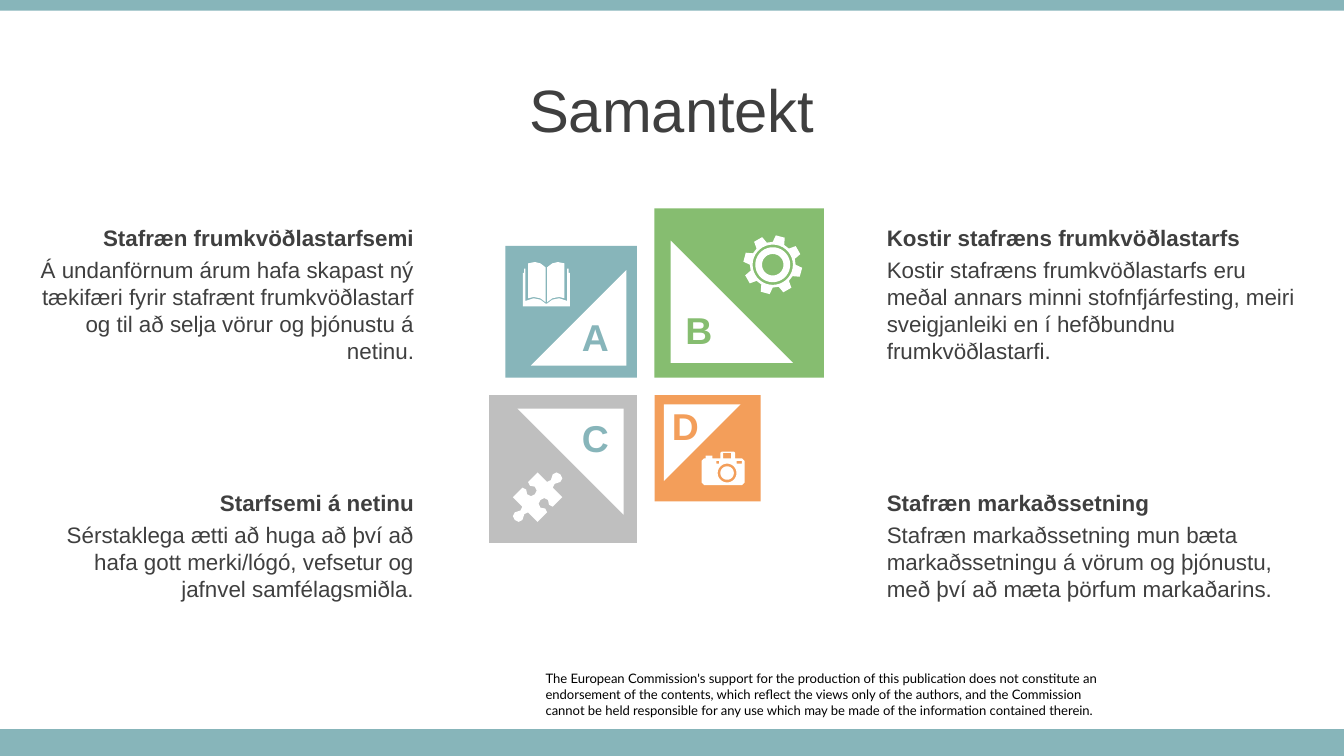
import math

from pptx import Presentation
from pptx.dml.color import RGBColor
from pptx.enum.shapes import MSO_SHAPE
from pptx.enum.text import MSO_ANCHOR, PP_ALIGN
from pptx.util import Pt

PX = 9144
RECT, TRIANGLE = MSO_SHAPE.RECTANGLE, MSO_SHAPE.RIGHT_TRIANGLE
LEFT, CENTER, RIGHT = PP_ALIGN.LEFT, PP_ALIGN.CENTER, PP_ALIGN.RIGHT
MIDDLE, TOP = MSO_ANCHOR.MIDDLE, MSO_ANCHOR.TOP
COLORS = {"teal": "87B5BA", "green": "86BD70", "orange": "F39E5A",
          "gray": "BFBFBF", "white": "FFFFFF", "text": "3F3F3F", "black": "000000"}


def px(*lengths):
    """Turn pixel lengths into EMU."""
    return [round(n * PX) for n in lengths]


def paint(sp, color):
    """Give a shape a plain fill with no line or shadow."""
    sp.shadow.inherit = False
    sp.fill.solid()
    sp.fill.fore_color.rgb = RGBColor.from_string(COLORS[color])
    sp.line.fill.background()


def add_block(s, kind, box, color, rotation=0):
    """Add a filled preset shape."""
    sp = s.shapes.add_shape(kind, *px(*box))
    sp.rotation = rotation
    paint(sp, color)


def add_text(s, box, lines, size, color="text", align=LEFT, bold=False,
             font="Arial", anchor=TOP, inset=(10, 5)):
    """Add a text box with one paragraph per line."""
    tf = s.shapes.add_textbox(*px(*box)).text_frame
    tf.word_wrap = True
    tf.vertical_anchor = anchor
    tf.margin_left = tf.margin_right = inset[0] * PX
    tf.margin_top = tf.margin_bottom = inset[1] * PX
    tf.text = "\n".join(lines)
    for p in tf.paragraphs:
        p.alignment = align
        p.font.name, p.font.size, p.font.bold = font, Pt(size), bold
        p.font.color.rgb = RGBColor.from_string(COLORS[color])


def add_icon(s, x, y, contours, rotation=0):
    """Add a white outline whose inner contours are holes."""
    first, *others = [[px(*point) for point in c] for c in contours]
    builder = s.shapes.build_freeform(*first[0])
    builder.add_line_segments(first[1:])
    for contour in others:
        builder.move_to(*contour[0])
        builder.add_line_segments(contour[1:])
    sp = builder.convert_to_shape(*px(x, y))
    sp.rotation = rotation
    paint(sp, "white")


def polar(cx, cy, radius, degrees):
    """Return the point at an angle on a circle."""
    a = math.radians(degrees)
    return cx + radius * math.cos(a), cy + radius * math.sin(a)


def circle(cx, cy, radius):
    """Return a closed circle as short segments."""
    return [polar(cx, cy, radius, d) for d in range(0, 361, 10)]


def rectangle(x, y, w, h):
    """Return the corners of a closed rectangle."""
    return [(x, y), (x + w, y), (x + w, y + h), (x, y + h), (x, y)]


def book():
    """Return the contours of an open book, 35 by 33."""
    page = [(4, 1), (9, 0), (13, 1), (17, 4), (17, 30), (13, 27), (8, 26), (4, 27), (4, 1)]
    cover = [(0, 33), (0, 8), (1, 8), (1, 5), (2, 5), (2, 29), (8, 27), (13, 28), (17, 31)]

    def mirror(points):
        return [(35 - x, y) for x, y in points]

    return [cover + mirror(cover)[::-1] + cover[:1], page, mirror(page)]


def gear():
    """Return the contours of an eight-toothed gear around its centre."""
    tooth = [(17, -15), (22, -9), (22, 9), (17, 15)]
    teeth = [polar(0, 0, r, 15 + 45 * k + d) for k in range(8) for r, d in tooth]
    return [teeth + teeth[:1]] + [circle(0, 0, r) for r in (15, 13, 8)]


def puzzle():
    """Return the contour of a puzzle piece around its centre."""
    quarter = [(0, -24), (3, -23), (4, -20), (2, -16), (3, -13), (13, -13),
               (13, -3), (10, -2), (7, -4), (4, -3), (3, 0)]
    half = quarter + [(x, -y) for x, y in quarter[::-1]]
    return [half + [(-x, y) for x, y in half[::-1]]]


def camera():
    """Return the contours of a camera, 32 by 25."""
    body = [(0, 7), (2, 5), (3, 5), (3, 3), (8, 3), (8, 5), (14, 5), (14, 1), (15, 0),
            (24, 0), (25, 1), (25, 5), (30, 5), (32, 7), (32, 23), (30, 25), (2, 25),
            (0, 23), (0, 7)]
    return [body, rectangle(16, 1, 6, 4), rectangle(11, 7, 2, 2), rectangle(26, 7, 4, 2),
            circle(19, 16, 7), circle(19, 16, 5)]


def add_tile(s, x, y, size, color, triangle, letter, icon):
    """Add a square with a triangle, a letter and an icon."""
    tx, ty, side, turn = triangle
    label, lx, ly, label_color = letter
    contours, ix, iy, icon_turn = icon
    add_block(s, RECT, (x, y, size, size), color)
    add_block(s, TRIANGLE, (x + tx, y + ty, side, side), "white", turn)
    add_text(s, (x + lx, y + ly, 44, 44), [label], 20, label_color, CENTER, True)
    add_icon(s, x + ix, y + iy, contours, icon_turn)


def add_pinwheel(s, x, y, gap):
    """Add the four tiles around a gap whose top left is given."""
    add_tile(s, x - 98, y - 98, 98, "teal", (19, 18, 71, 270),
             ("A", 45, 46, "teal"), (book(), 13, 12, 0))
    add_tile(s, x + gap, y - 126, 126, "green", (12, 24, 91, 0),
             ("B", 11, 69, "green"), (gear(), 88, 42, 0))
    add_tile(s, x - 110, y + gap, 110, "gray", (21, 10, 79, 180),
             ("C", 57, 10, "teal"), (puzzle(), 36, 76, 45))
    add_tile(s, x + gap, y + gap, 79, "orange", (7, 7, 57, 90),
             ("D", 1, 1, "orange"), (camera(), 35, 42, 0))


def add_topic(s, x, y, w, h, align, heading, body):
    """Add a bold heading with its text below."""
    add_text(s, (x, y + 24, w, h - 24), [body], 12, align=align)
    add_text(s, (x, y, w, 30), [heading], 12, align=align, bold=True)


def add_frame(s, w, h):
    """Add the edge bars and the disclaimer."""
    add_text(s, (406, 499, 417, 35), [
        "The European Commission's support for the production of this publication does not "
        "constitute an endorsement of the contents, which reflect the views only of the "
        "authors, and the Commission",
        "cannot be held responsible for any use which may be made of the information "
        "contained therein."], 7, "black", font="Lato", inset=(0, 0))
    add_block(s, RECT, (0, h - 20, w, 20), "teal")
    add_block(s, RECT, (0, 0, w, 8), "teal")


def main():
    """Build and save the slide."""
    w = 1000
    h = w * 9 / 16
    prs = Presentation()
    prs.slide_width, prs.slide_height = px(w, h)
    s = prs.slides.add_slide(prs.slide_layouts[6])
    add_frame(s, w, h)
    add_text(s, (0, 49, w, 63), ["Samantekt"], 32, align=CENTER, anchor=MIDDLE)
    add_pinwheel(s, 474, 281, 13)
    topics = [
        (0, 162, 318, 115, RIGHT, "Stafræn frumkvöðlastarfsemi",
         "Á undanförnum árum hafa skapast ný tækifæri fyrir stafrænt frumkvöðlastarf og til "
         "að selja vörur og þjónustu á netinu."),
        (12, 359, 306, 95, RIGHT, "Starfsemi á netinu",
         "Sérstaklega ætti að huga að því að hafa gott merki/lógó, vefsetur og jafnvel "
         "samfélagsmiðla."),
        (650, 162, 335, 115, LEFT, "Kostir stafræns frumkvöðlastarfs",
         "Kostir stafræns frumkvöðlastarfs eru meðal annars minni stofnfjárfesting, meiri "
         "sveigjanleiki en í hefðbundnu frumkvöðlastarfi."),
        (650, 359, 323, 95, LEFT, "Stafræn markaðssetning",
         "Stafræn markaðssetning mun bæta markaðssetningu á vörum og þjónustu, með því að "
         "mæta þörfum markaðarins."),
    ]
    for topic in topics:
        add_topic(s, *topic)
    prs.save("out.pptx")


if __name__ == "__main__":
    main()
